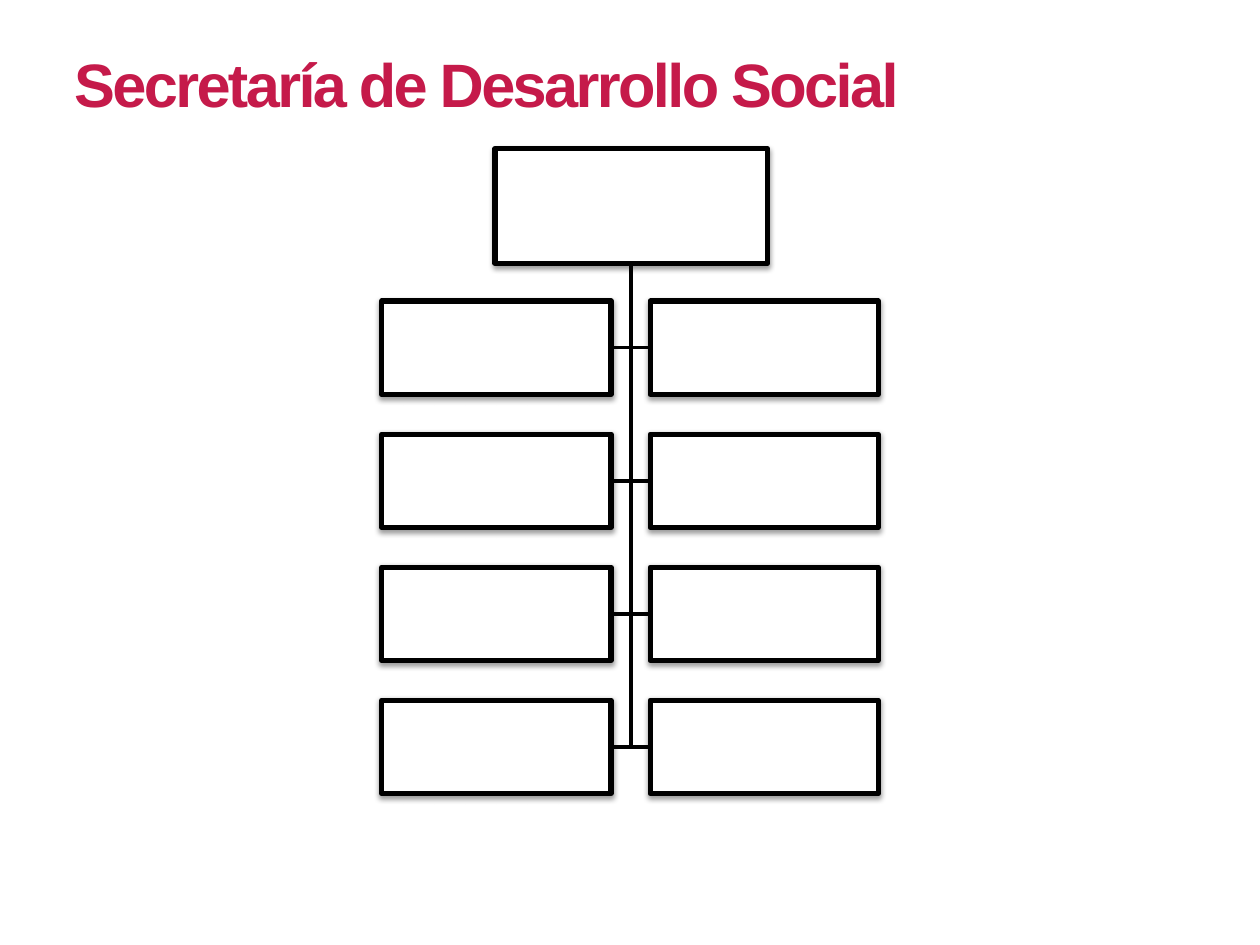
import lxml.etree
import pptx
import pptx.dml.color
import pptx.enum.shapes
import pptx.enum.text
import pptx.oxml.ns
import pptx.util
from pptx.util import Inches

CRIMSON = pptx.dml.color.RGBColor(0xC5, 0x1A, 0x4A)
BLACK = pptx.dml.color.RGBColor(0x00, 0x00, 0x00)
WHITE = pptx.dml.color.RGBColor(0xFF, 0xFF, 0xFF)

TRUNK_X, TRUNK_TOP = 5.01, 2.08
ROWS, FIRST_TOP, ROW_STEP = 4, 2.39, 1.056
BOX_HEIGHT = 0.74
LEFT_X, LEFT_WIDTH = 3.03, 1.82
RIGHT_X, RIGHT_WIDTH = 5.16, 1.81


def add_title(slide, text):
    """Add the slide title with tightened letter spacing."""
    sp = slide.shapes.add_textbox(Inches(0.49), Inches(0.32), Inches(6.81), Inches(0.69))
    tf = sp.text_frame
    tf.word_wrap = True
    tf.auto_size = pptx.enum.text.MSO_AUTO_SIZE.SHAPE_TO_FIT_TEXT
    r = tf.paragraphs[0].add_run()
    r.text = text
    r.font.name = "Arial"
    r.font.size = pptx.util.Pt(35)
    r.font.bold = True
    r.font.color.rgb = CRIMSON
    r.font._element.set("spc", "-150")


def add_shadow(sp):
    """Give a shape a soft shadow falling straight down."""
    sp.shadow.inherit = False
    qn = pptx.oxml.ns.qn
    effects = sp._element.spPr.find(qn("a:effectLst"))
    shadow = lxml.etree.SubElement(
        effects, qn("a:outerShdw"),
        blurRad=str(pptx.util.Pt(3.1)), dist=str(pptx.util.Pt(1.6)),
        dir="5400000", rotWithShape="0")
    color = lxml.etree.SubElement(shadow, qn("a:srgbClr"), val=str(BLACK))
    lxml.etree.SubElement(color, qn("a:alpha"), val="38000")


def add_box(group, left, top, width, height):
    """Add one empty box of the chart."""
    sp = group.shapes.add_shape(
        pptx.enum.shapes.MSO_SHAPE.RECTANGLE,
        Inches(left), Inches(top), Inches(width), Inches(height))
    sp.fill.solid()
    sp.fill.fore_color.rgb = WHITE
    sp.line.color.rgb = BLACK
    sp.line.width = pptx.util.Pt(3)
    add_shadow(sp)


def add_branch(group, end_x, end_y):
    """Add an elbow line from the head box to the side of a lower box."""
    builder = group.shapes.build_freeform(Inches(TRUNK_X), Inches(TRUNK_TOP))
    builder.add_line_segments(
        [(Inches(TRUNK_X), Inches(end_y)), (Inches(end_x), Inches(end_y))], close=False)
    sp = builder.convert_to_shape()
    sp.fill.background()
    sp.line.color.rgb = BLACK
    sp.line.width = pptx.util.Pt(2)
    sp.shadow.inherit = False


def add_chart_boxes(slide):
    """Add the organisation chart, branches behind boxes."""
    group = slide.shapes.add_group_shape()
    tops = [FIRST_TOP + i * ROW_STEP for i in range(ROWS)]
    for top in reversed(tops):
        for end_x in (RIGHT_X, LEFT_X + LEFT_WIDTH):
            add_branch(group, end_x, top + BOX_HEIGHT / 2)
    add_box(group, 3.93, 1.18, 2.16, 0.91)
    for top in tops:
        for left, width in ((LEFT_X, LEFT_WIDTH), (RIGHT_X, RIGHT_WIDTH)):
            add_box(group, left, top, width, BOX_HEIGHT)


def main():
    """Build and save the slide."""
    prs = pptx.Presentation()
    prs.slide_width = Inches(10)
    prs.slide_height = Inches(7.5)
    slide = prs.slides.add_slide(prs.slide_layouts[6])
    add_title(slide, "Secretaría de Desarrollo Social")
    add_chart_boxes(slide)
    prs.save("out.pptx")


if __name__ == "__main__":
    main()
